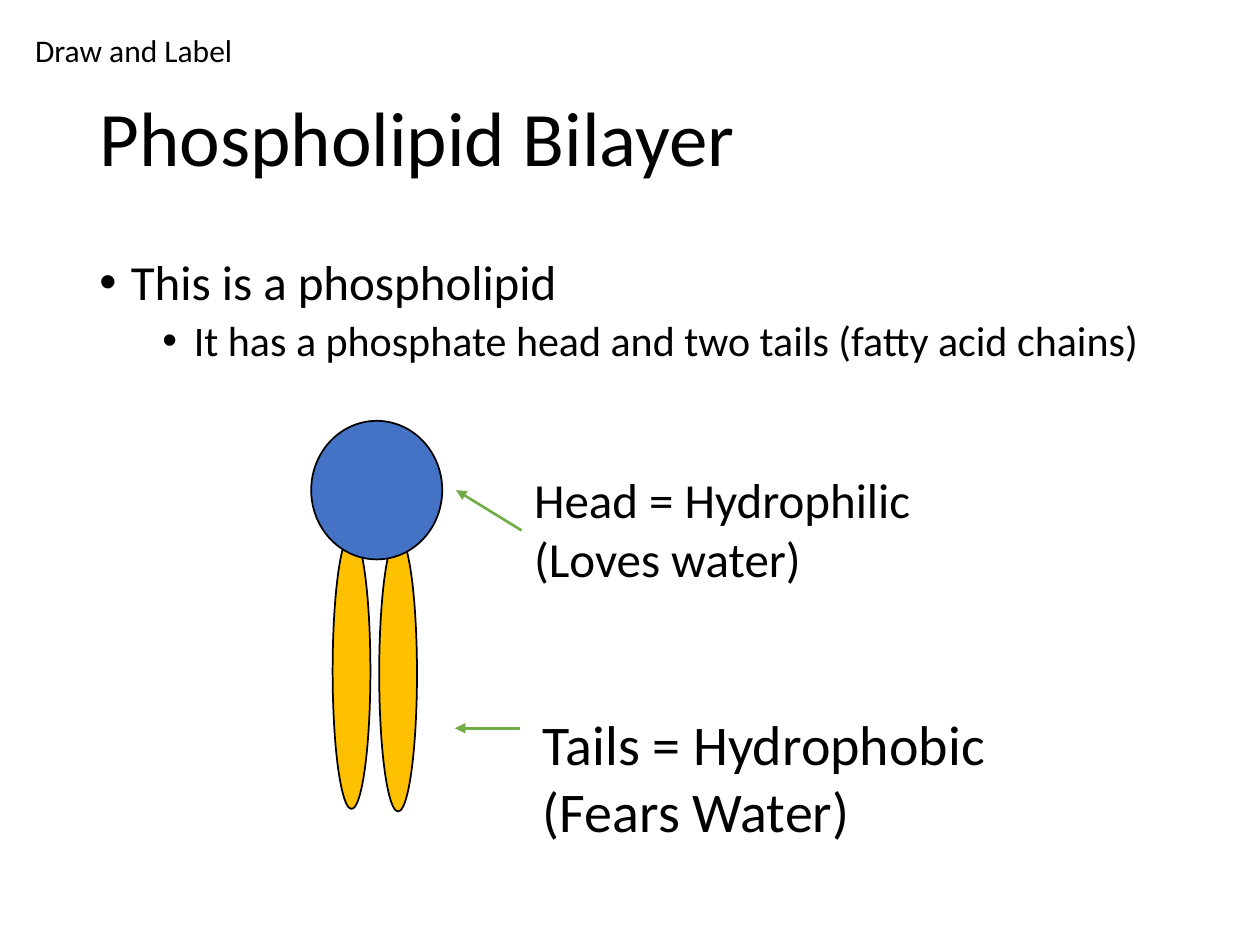
from dataclasses import dataclass

from lxml.etree import SubElement
from pptx import Presentation
from pptx.dml.color import RGBColor
from pptx.enum.shapes import MSO_CONNECTOR as Connector, MSO_SHAPE as Preset
from pptx.enum.text import MSO_ANCHOR as Anchor
from pptx.oxml.ns import qn
from pptx.util import Inches, Pt


@dataclass(frozen=True)
class Theme:
    font: str = "Calibri"
    ink: str = "000000"
    head: str = "4472C4"
    tail: str = "FFC000"
    arrow: str = "70AD47"
    title: int = 44
    tail_label: int = 32
    body: int = 28
    detail: int = 24
    note: int = 18
    outline: float = 1
    arrow_width: float = 1.5


THEME = Theme()

TITLE = ("Phospholipid Bilayer", (0.69, 0.4, 8.62, 1.45))
BODY_BOX = (0.69, 2, 8.62, 4.76)
BULLETS = [
    ("This is a phospholipid", 0, THEME.body, 10),
    ("It has a phosphate head and two tails (fatty acid chains)", 1, THEME.detail, 5),
]
LABELS = [
    (["Head = Hydrophilic", "(Loves water)"], THEME.body, (4.14, 3.68, 4.48, 1.04)),
    (["Tails = Hydrophobic", "(Fears Water)"], THEME.tail_label, (4.21, 5.58, 4.68, 1.18)),
    (["Draw and Label"], THEME.note, (0.18, 0.2, 3.33, 0.4)),
]
PHOSPHOLIPID = [
    (THEME.tail, (2.64, 4.23, 0.3, 2.19)),
    (THEME.tail, (3.01, 4.25, 0.3, 2.19)),
    (THEME.head, (2.47, 3.34, 1.04, 1.1)),
]
ARROWS = [
    (4.14, 4.21, 3.62, 3.89),
    (4.13, 5.78, 3.61, 5.78),
]


def inches(values):
    return [Inches(value) for value in values]


def color(name):
    return RGBColor.from_string(name)


def add_text_frame(slide, box, anchor=Anchor.TOP):
    frame = slide.shapes.add_textbox(*inches(box)).text_frame
    frame.word_wrap = True
    frame.vertical_anchor = anchor
    return frame


def add_paragraph(frame, index, text, size):
    paragraph = frame.add_paragraph() if index else frame.paragraphs[0]
    run = paragraph.add_run()
    run.text = text
    run.font.name = THEME.font
    run.font.size = Pt(size)
    run.font.color.rgb = color(THEME.ink)
    return paragraph


def add_title(slide):
    text, box = TITLE
    frame = add_text_frame(slide, box, Anchor.MIDDLE)
    add_paragraph(frame, 0, text, THEME.title).line_spacing = 0.9


def add_bullets(slide):
    frame = add_text_frame(slide, BODY_BOX)
    for index, (text, level, size, space) in enumerate(BULLETS):
        paragraph = add_paragraph(frame, index, text, size)
        paragraph.level = level
        paragraph.line_spacing = 0.9
        paragraph.space_before = Pt(space)
        properties = paragraph._p.get_or_add_pPr()
        properties.set("marL", str(Inches(0.25 + 0.5 * level)))
        properties.set("indent", str(Inches(-0.25)))
        SubElement(properties, qn("a:buFont"), typeface="Arial")
        SubElement(properties, qn("a:buChar"), char="•")


def add_labels(slide):
    for lines, size, box in LABELS:
        frame = add_text_frame(slide, box)
        for index, line in enumerate(lines):
            add_paragraph(frame, index, line, size)


def add_phospholipid(slide):
    group = slide.shapes.add_group_shape()
    for fill, box in PHOSPHOLIPID:
        shape = group.shapes.add_shape(Preset.OVAL, *inches(box))
        shape.shadow.inherit = False
        shape.fill.solid()
        shape.fill.fore_color.rgb = color(fill)
        shape.line.color.rgb = color(THEME.ink)
        shape.line.width = Pt(THEME.outline)


def add_arrows(slide):
    for ends in ARROWS:
        arrow = slide.shapes.add_connector(Connector.STRAIGHT, *inches(ends))
        arrow.line.color.rgb = color(THEME.arrow)
        arrow.line.width = Pt(THEME.arrow_width)
        SubElement(arrow.line._get_or_add_ln(), qn("a:tailEnd"), type="triangle")
        SubElement(arrow._element.spPr, qn("a:effectLst"))


def main():
    presentation = Presentation()
    presentation.slide_width, presentation.slide_height = inches((10, 7.5))
    slide = presentation.slides.add_slide(presentation.slide_layouts[6])
    add_title(slide)
    add_bullets(slide)
    add_phospholipid(slide)
    add_labels(slide)
    add_arrows(slide)
    presentation.save("out.pptx")


if __name__ == "__main__":
    main()
